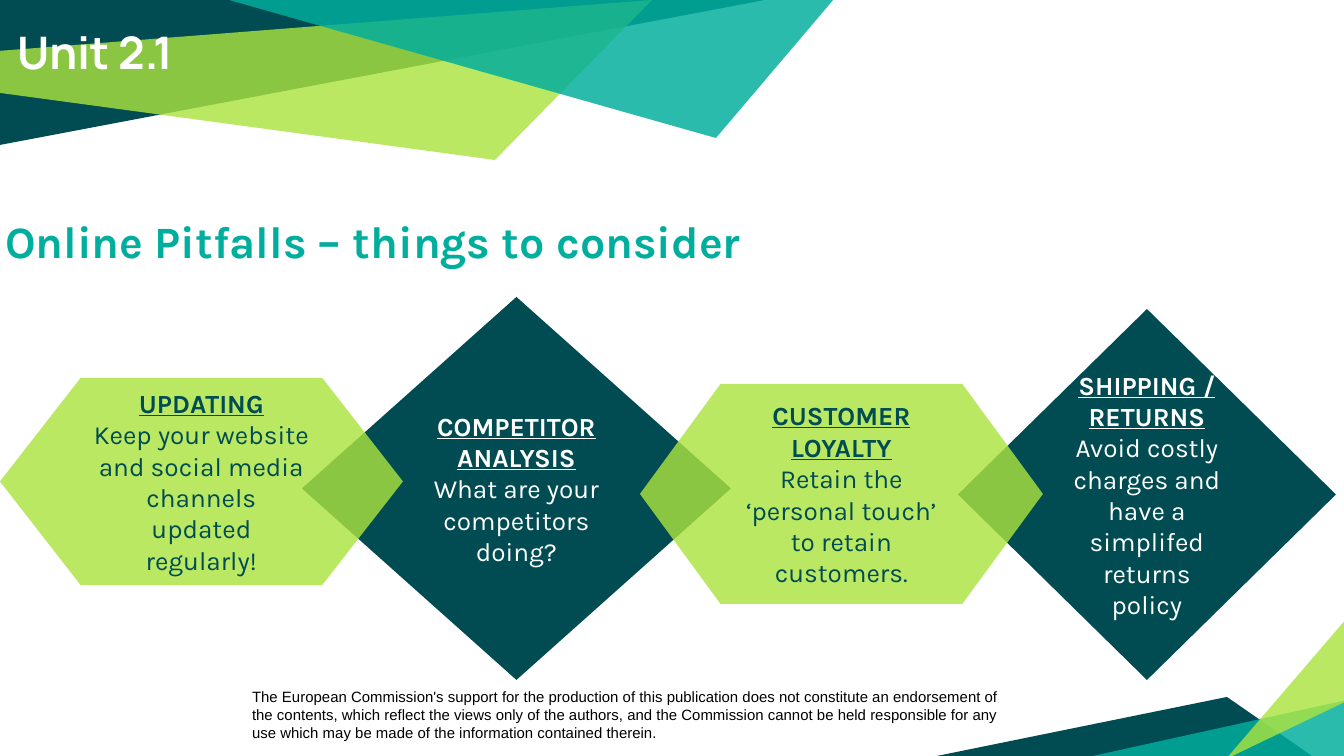
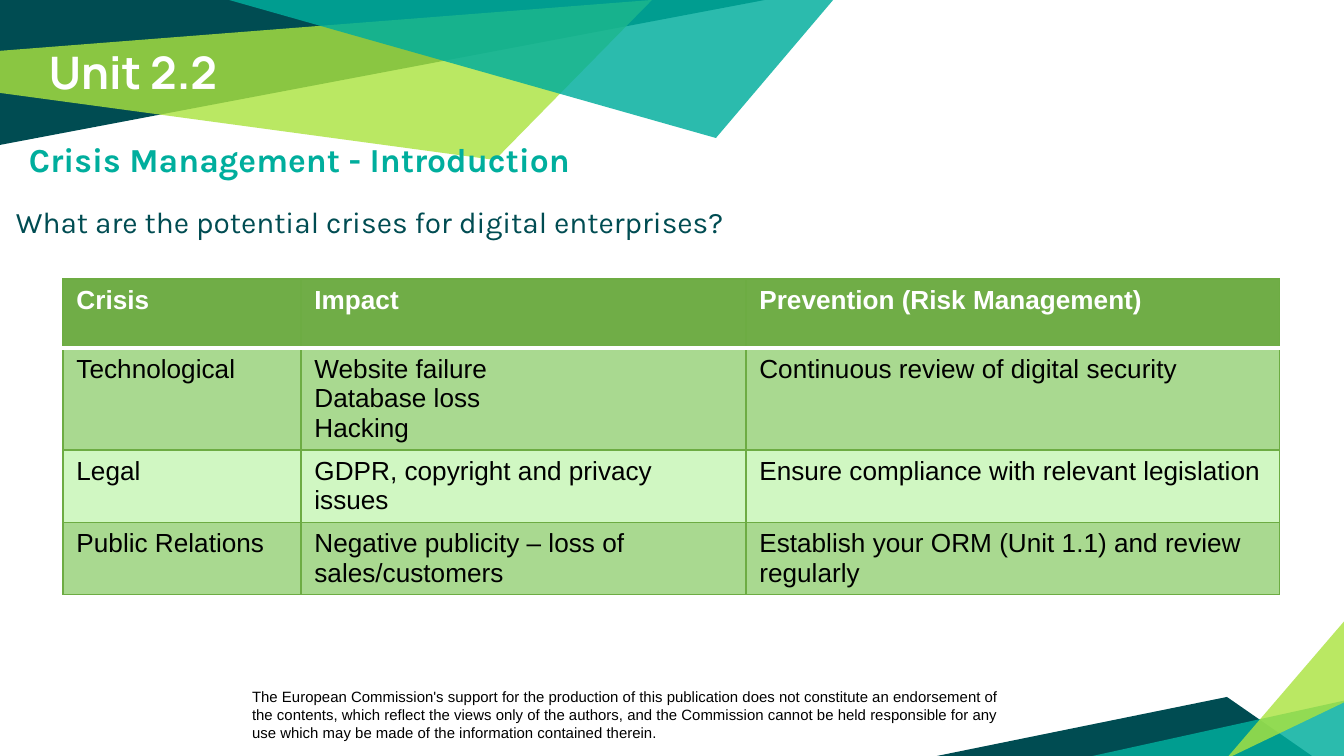
import pptx
import pptx.util
import pptx.dml.color
import pptx.enum.shapes
import pptx.enum.text
import pptx.oxml
import pptx.oxml.ns

PX = 914400 / 134.4
COLOURS = {"dark": "004C52", "lime": "ABE33F", "teal": "00AE9D", "white": "FFFFFF",
           "black": "000000", "header": "70AD47", "border": "6DAC43",
           "band": "A9D990", "pale": "D0F7C2"}
DISCLAIMER = ("The European Commission's support for the production of this publication "
              "does not constitute an endorsement of the contents, which reflect the views "
              "only of the authors, and the Commission cannot be held responsible for any "
              "use which may be made of the information contained therein.")
BANDS = [
    ("dark", 100, [(0, 0), (0, 145), (765, 0)]),
    ("lime", 81, [(-1, 51), (0, 93), (495, 160), (652, 0)]),
    ("dark", 100, [(937, 756), (1312, 756), (1227, 697)]),
    ("teal", 83, [(1347, 700), (1347, 759), (1079, 759)]),
    ("lime", 81, [(1347, 701), (1347, 618), (1226, 759)]),
    ("teal", 83, [(229, 0), (716, 138), (834, -1), (819, 0)]),
]
PITFALLS = [
    ("diamond", (958, 309, 378, 371), "SHIPPING / RETURNS",
     "Avoid costly charges and have a simplifed returns policy"),
    ("diamond", (302, 297, 429, 383), "COMPETITOR ANALYSIS", "What are your competitors doing?"),
    ("hexagon", (0, 378, 403, 207), "UPDATING",
     "Keep your website and social media channels updated regularly!"),
    ("hexagon", (640, 384, 403, 220), "CUSTOMER LOYALTY",
     "Retain the ‘personal touch’ to retain customers."),
]
CRISES = [
    ["Crisis", "Impact", "Prevention (Risk Management)"],
    ["Technological", "Website failure\nDatabase loss\nHacking",
     "Continuous review of digital security"],
    ["Legal", "GDPR, copyright and privacy issues", "Ensure compliance with relevant legislation"],
    ["Public Relations", "Negative publicity – loss of sales/customers",
     "Establish your ORM (Unit 1.1) and review regularly"],
]


def emu(px):
    """Turn px into EMU."""
    return pptx.util.Emu(round(px * PX))


def rgb(name):
    """Look up a named colour."""
    return pptx.dml.color.RGBColor.from_string(COLOURS[name])


def add_span(para, text, size, font, colour, bold=False, underline=False):
    """Add one formatted run to a paragraph."""
    span = para.add_run()
    span.text = text
    span.font.size = pptx.util.Pt(size)
    span.font.name = font
    span.font.color.rgb = rgb(colour)
    span.font.bold = bold
    span.font.underline = underline


def paint(shape, colour, opacity=100):
    """Give a shape a flat fill without line or shadow."""
    shape.shadow.inherit = False
    shape.fill.solid()
    shape.fill.fore_color.rgb = rgb(colour)
    shape.line.fill.background()
    if opacity < 100:
        tone = shape.element.find(".//" + pptx.oxml.ns.qn("a:srgbClr"))
        alpha = tone.makeelement(pptx.oxml.ns.qn("a:alpha"), {"val": str(opacity * 1000)})
        tone.append(alpha)


def set_frame(shape, inset_y=13, anchor="TOP"):
    """Prepare a wrapped text frame and return it."""
    frame = shape.text_frame
    frame.word_wrap = True
    frame.auto_size = pptx.enum.text.MSO_AUTO_SIZE.NONE
    frame.vertical_anchor = getattr(pptx.enum.text.MSO_ANCHOR, anchor)
    frame.margin_left = frame.margin_right = emu(13)
    frame.margin_top = frame.margin_bottom = emu(inset_y)
    return frame


def fill_placeholder(shape, area, text, size, font, colour):
    """Move a placeholder and write one bold, left-aligned line without bullet."""
    shape.left, shape.top, shape.width, shape.height = map(emu, area)
    para = set_frame(shape).paragraphs[0]
    properties = para._p.get_or_add_pPr()
    properties.set("marL", "0")
    properties.set("indent", "0")
    properties.append(properties.makeelement(pptx.oxml.ns.qn("a:buNone"), {}))
    para.alignment = pptx.enum.text.PP_ALIGN.LEFT
    para.space_before = pptx.util.Pt(0)
    add_span(para, text, size, font, colour, bold=True)


def add_text(page, area, text, size, font, colour, inset_y=13):
    """Add a text box with one paragraph."""
    box = page.shapes.add_textbox(*map(emu, area))
    add_span(set_frame(box, inset_y).paragraphs[0], text, size, font, colour)
    return box


def add_band(page, colour, opacity, points):
    """Add a polygon of the background artwork."""
    builder = page.shapes.build_freeform(*points[0], scale=PX)
    builder.add_line_segments(points[1:], close=True)
    band = builder.convert_to_shape()
    paint(band, colour, opacity)
    return band


def dress_layout(layout, page):
    """Put the shared bands and disclaimer on the layout."""
    for holder in list(layout.placeholders)[2:]:
        layout.shapes.element.remove(holder.element)
    parts = [add_text(page, (239, 681, 778, 67), DISCLAIMER, 8, "Arial", "black", inset_y=7)]
    parts += [add_band(page, *band) for band in BANDS]
    for part in parts:
        layout.shapes.element.append(part.element)


def add_pitfall(page, kind, area, heading, advice):
    """Add a diamond or hexagon with an underlined heading and advice."""
    shapes = pptx.enum.shapes.MSO_SHAPE
    preset, fill, opacity, ink = {
        "diamond": (shapes.DIAMOND, "dark", 100, "white"),
        "hexagon": (shapes.FLOWCHART_PREPARATION, "lime", 81, "dark"),
    }[kind]
    shape = page.shapes.add_shape(preset, *map(emu, area))
    paint(shape, fill, opacity)
    frame = set_frame(shape, anchor="MIDDLE")
    for para, text, strong in ((frame.paragraphs[0], heading, True),
                               (frame.add_paragraph(), advice, False)):
        para.alignment = pptx.enum.text.PP_ALIGN.CENTER
        add_span(para, text, 14, "Karla", ink, bold=strong, underline=strong)


def add_border(cell, side, colour, points):
    """Draw one side of a table cell."""
    cell._tc.get_or_add_tcPr().append(pptx.oxml.parse_xml(
        f'<a:ln{side} {pptx.oxml.ns.nsdecls("a")} w="{int(points * 12700)}"><a:solidFill>'
        f'<a:srgbClr val="{COLOURS[colour]}"/></a:solidFill></a:ln{side}>'))


def add_crisis_table(page, area, widths, heights):
    """Add the banded crisis table."""
    table = page.shapes.add_table(len(heights), len(widths), *map(emu, area)).table
    for column, width in zip(table.columns, widths):
        column.width = emu(width)
    for number, (row, height, texts) in enumerate(zip(table.rows, heights, CRISES)):
        row.height = emu(height)
        header = number == 0
        fill = "header" if header else ("pale", "band")[number % 2]
        for cell, text in zip(row.cells, texts):
            for side in "LRTB":
                divider = (number, side) in ((0, "B"), (1, "T"))
                add_border(cell, side, *(("white", 2) if divider else ("border", 0.75)))
            cell.fill.solid()
            cell.fill.fore_color.rgb = rgb(fill)
            for index, line in enumerate(text.split("\n")):
                frame = cell.text_frame
                para = frame.add_paragraph() if index else frame.paragraphs[0]
                add_span(para, line, 14, "Arial", "white" if header else "black", bold=header)


def add_unit(deck, unit, unit_at, heading, heading_area, size):
    """Add a slide with its unit title and heading."""
    page = deck.slides.add_slide(deck.slide_layouts[1])
    fill_placeholder(page.shapes.title, (*unit_at, 1083, 81), unit, 24, "Manrope", "white")
    fill_placeholder(page.placeholders[1], heading_area, heading, size, "Karla", "teal")
    return page


def main():
    """Build the deck."""
    deck = pptx.Presentation()
    deck.slide_width, deck.slide_height = emu(1344), emu(756)

    page = add_unit(deck, "Unit 2.1", (4, 12), "Online Pitfalls – things to consider",
                    (-8, 201, 1344, 341), 24)
    dress_layout(deck.slide_layouts[1], page)
    for pitfall in PITFALLS:
        add_pitfall(page, *pitfall)

    page = add_unit(deck, "Unit 2.2", (36, 32), "Crisis Management - Introduction",
                    (16, 126, 1304, 503), 18)
    add_text(page, (3, 191, 1304, 304), "What are the potential crises for digital enterprises?",
             16, "Karla", "dark")
    add_crisis_table(page, (63, 279, 1217, 315), (238, 445, 534), (69, 102, 72, 72))
    deck.save("out.pptx")


if __name__ == "__main__":
    main()
